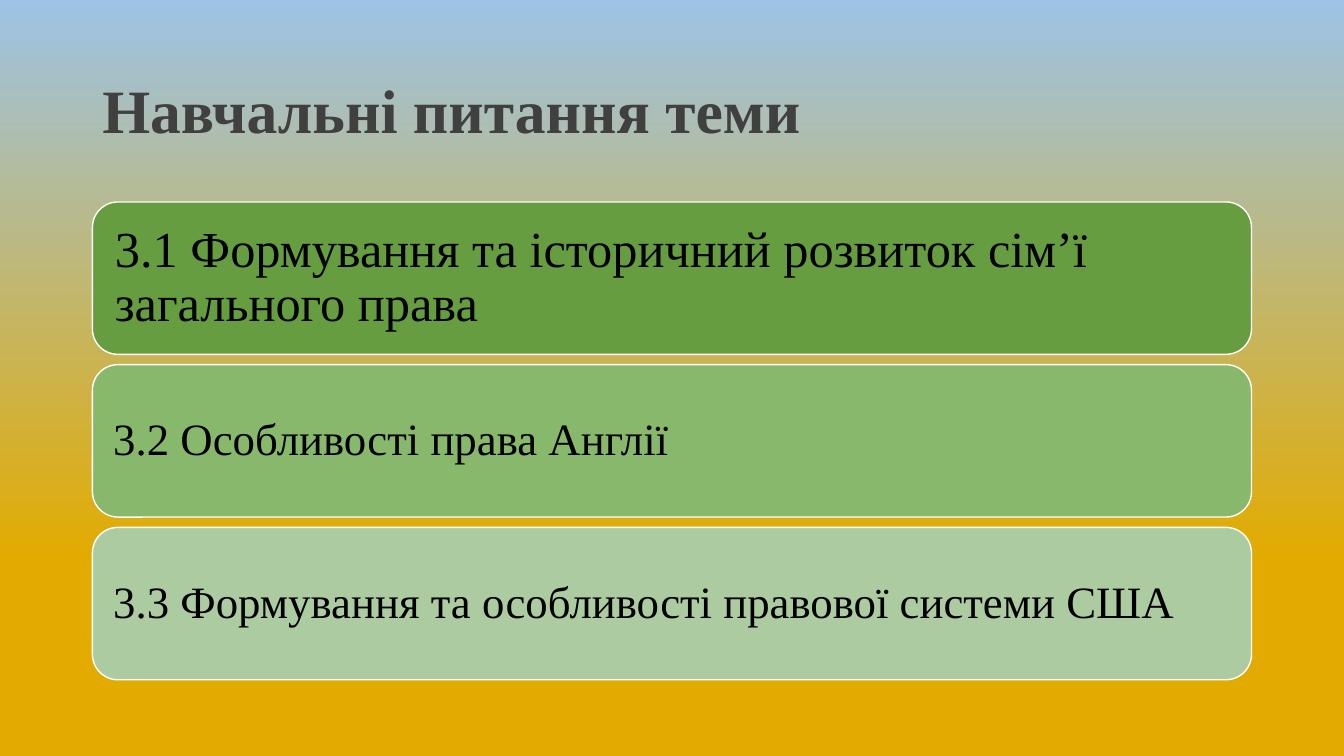
"""Builds a slide that lists the study questions of the topic."""
from pptx import Presentation
from pptx.dml.color import RGBColor
from pptx.enum.shapes import MSO_SHAPE as Shape
from pptx.enum.text import MSO_ANCHOR as Anchor, PP_ALIGN as Align
from pptx.util import Cm, Pt

FONT = "Times New Roman"
TITLE = "Навчальні питання теми"
ITEMS = [
    ("3.1 Формування та історичний розвиток сім’ї загального права", 36, "669D40"),
    ("3.2 Особливості права Англії", 32, "87B86B"),
    ("3.3 Формування та особливості правової системи США", 32, "ADCBA0"),
]
STOPS = [(0.26, "E3AB00"), (1, "9DC3E6")]
LEFT, WIDTH = 2.33, 29.21
TOP, HIGH, GAP = 5.09, 3.84, 0.26


def paint(color, code):
    color.rgb = RGBColor.from_string(code)


def write(shape, text, size, color="000000", bold=False, pad=0.25):
    frame = shape.text_frame
    frame.word_wrap = True
    frame.vertical_anchor = Anchor.MIDDLE
    frame.margin_left = frame.margin_right = Cm(pad)
    frame.margin_top = frame.margin_bottom = Cm(pad)
    para = frame.paragraphs[0]
    para.alignment = Align.LEFT
    para.line_spacing = 0.9
    run = para.add_run()
    run.text = text
    run.font.name = FONT
    run.font.size = Pt(size)
    run.font.bold = bold
    paint(run.font.color, color)


def main():
    deck = Presentation()
    deck.slide_width, deck.slide_height = Cm(33.87), Cm(19.05)
    slide = deck.slides.add_slide(deck.slide_layouts[6])

    back = slide.background.fill
    back.gradient()
    back.gradient_angle = 90
    for stop, (place, code) in zip(back.gradient_stops, STOPS):
        stop.position = place
        paint(stop.color, code)

    title = slide.shapes.add_textbox(Cm(LEFT), Cm(1.01), Cm(WIDTH), Cm(3.68))
    write(title, TITLE, 44, color="404040", bold=True)

    for row, (text, size, code) in enumerate(ITEMS):
        top = TOP + row * (HIGH + GAP)
        card = slide.shapes.add_shape(
            Shape.ROUNDED_RECTANGLE, Cm(LEFT), Cm(top), Cm(WIDTH), Cm(HIGH))
        card.shadow.inherit = False
        card.fill.solid()
        paint(card.fill.fore_color, code)
        paint(card.line.color, "FFFFFF")
        card.line.width = Pt(1)
        write(card, text, size, pad=size / 95)

    deck.save("out.pptx")


if __name__ == "__main__":
    main()
